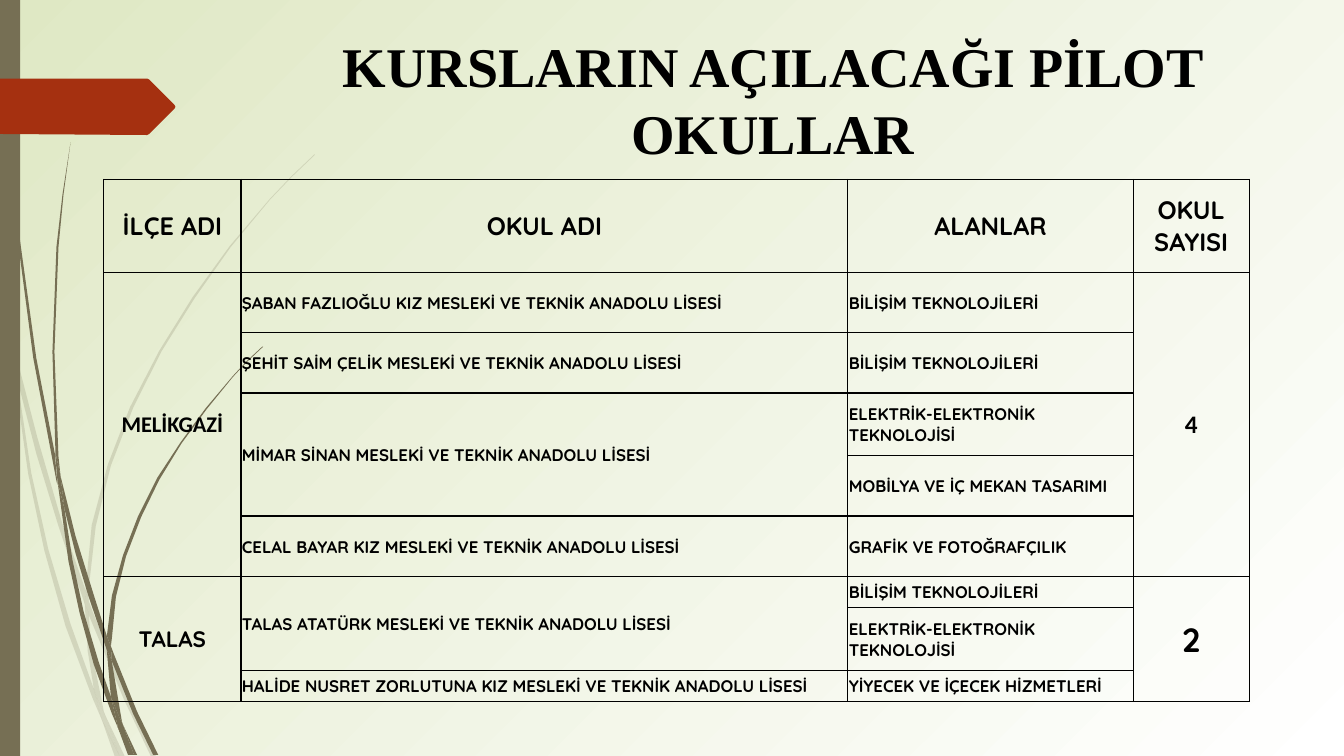
from dataclasses import dataclass
from lxml.etree import SubElement
from pptx import Presentation
from pptx.dml.color import RGBColor
from pptx.enum.shapes import MSO_SHAPE
from pptx.enum.text import MSO_ANCHOR, PP_ALIGN
from pptx.oxml.ns import qn
from pptx.util import Pt

PX = 9144  # EMU; 100 px to the inch
BLACK = RGBColor(0x00, 0x00, 0x00)
WHITE = RGBColor(0xFF, 0xFF, 0xFF)
LIME = RGBColor(0xDF, 0xE8, 0xC4)
OLIVE = RGBColor(0x76, 0x6F, 0x54)
RUST = RGBColor(0xA5, 0x30, 0x10)

Points = tuple[tuple[int, int], ...]


@dataclass
class Wisp:
    """A bunch of grass blades in one tint, each blade an outline."""
    alpha: int
    blades: tuple[Points, ...]


@dataclass
class Entry:
    row: int
    col: int
    text: str
    size: int = 12
    span: int = 1
    font: str = "Quicksand"


PALE = Wisp(20, (
    ((11, 350), (9, 322), (0, 282), (0, 299), (10, 344)),
    ((58, 522), (84, 599), (85, 586), (62, 520), (37, 434), (14, 345), (17, 376), (36, 450)),
    ((92, 607), (88, 596), (88, 610), (123, 694), (150, 751), (155, 751), (127, 692)),
    ((119, 751), (124, 751), (105, 711)),
    ((93, 683), (70, 619), (48, 545), (31, 469), (17, 376), (11, 350), (28, 470),
     (44, 546), (65, 621), (92, 693), (101, 714), (99, 707)),
    ((84, 599), (87, 646), (93, 683), (96, 692), (105, 711), (103, 706), (91, 646),
     (88, 610), (88, 608)),
    ((88, 584), (95, 522), (110, 462), (132, 405), (160, 349), (193, 296), (229, 245),
     (268, 198), (290, 175), (312, 154), (312, 153), (289, 175), (268, 197), (228, 244),
     (191, 295), (158, 348), (129, 404), (107, 461), (91, 521), (85, 584), (85, 586),
     (88, 596)),
    ((101, 714), (114, 751), (119, 751)),
    ((88, 608), (88, 610), (88, 596), (85, 586), (84, 599)),
    ((96, 692), (93, 683), (99, 707), (101, 714), (119, 751), (105, 711)),
))
DARK = Wisp(100, (
    ((7, 110), (17, 233), (33, 355), (56, 477), (57, 481), (55, 457), (55, 453),
     (36, 355), (19, 232), (8, 109), (5, 48), (4, 0), (3, 0), (4, 48)),
    ((88, 592), (106, 645), (106, 633), (106, 631), (93, 590), (75, 532), (60, 472),
     (64, 505), (75, 549)),
    ((113, 649), (110, 641), (111, 656), (132, 708), (152, 749), (157, 749), (136, 706)),
    ((110, 691), (98, 657), (83, 607), (72, 556), (64, 505), (57, 477), (68, 557),
     (79, 608), (93, 659), (111, 708), (117, 722), (116, 717)),
    ((60, 472), (58, 453), (54, 349), (58, 245), (63, 193), (70, 141), (62, 193),
     (56, 245), (52, 349), (55, 449)),
    ((133, 749), (136, 749), (122, 719)),
    ((57, 477), (64, 505), (60, 472), (55, 449), (55, 453)),
    ((111, 633), (115, 592), (125, 552), (140, 513), (158, 476), (180, 440), (205, 406),
     (231, 374), (245, 359), (261, 344), (260, 344), (245, 358), (231, 373), (204, 405),
     (179, 439), (156, 474), (137, 512), (122, 551), (111, 591), (106, 631), (110, 641)),
    ((117, 722), (127, 749), (131, 749)),
    ((106, 645), (110, 691), (116, 706), (122, 719), (121, 716), (111, 656), (109, 651)),
    ((106, 645), (109, 651), (111, 656), (110, 641), (106, 631), (106, 633)),
    ((116, 706), (110, 691), (116, 717), (117, 722), (130, 749), (133, 749), (122, 719)),
))
ARROW = ((0, 78), (146, 78), (148, 79), (173, 104), (174, 106), (173, 108),
         (148, 133), (146, 134), (0, 133))

COLS = (136, 602, 283, 115)
ROWS = (92, 60, 60, 62, 60, 60, 31, 62, 31)
ENTRIES = (
    *(Entry(0, col, name, 18)
      for col, name in enumerate(("İLÇE ADI", "OKUL ADI", "ALANLAR", "OKUL SAYISI"))),
    Entry(1, 0, "MELİKGAZİ", 16, 5, "Calibri"),
    Entry(6, 0, "TALAS", 16, 3),
    Entry(1, 1, "ŞABAN FAZLIOĞLU KIZ MESLEKİ VE TEKNİK ANADOLU LİSESİ"),
    Entry(2, 1, "ŞEHİT SAİM ÇELİK MESLEKİ VE TEKNİK ANADOLU LİSESİ"),
    Entry(3, 1, "MİMAR SİNAN MESLEKİ VE TEKNİK ANADOLU LİSESİ", span=2),
    Entry(5, 1, "CELAL BAYAR KIZ MESLEKİ VE TEKNİK ANADOLU LİSESİ"),
    Entry(6, 1, "TALAS ATATÜRK MESLEKİ VE TEKNİK ANADOLU LİSESİ", span=2),
    Entry(8, 1, "HALİDE NUSRET ZORLUTUNA KIZ MESLEKİ VE TEKNİK ANADOLU LİSESİ"),
    *(Entry(row, 2, field) for row, field in enumerate((
        "BİLİŞİM TEKNOLOJİLERİ", "BİLİŞİM TEKNOLOJİLERİ",
        "ELEKTRİK-ELEKTRONİK TEKNOLOJİSİ", "MOBİLYA VE İÇ MEKAN TASARIMI",
        "GRAFİK VE FOTOĞRAFÇILIK", "BİLİŞİM TEKNOLOJİLERİ",
        "ELEKTRİK-ELEKTRONİK TEKNOLOJİSİ", "YİYECEK VE İÇECEK HİZMETLERİ"), 1)),
    Entry(1, 3, "4", 18, 5, "Calibri"),
    Entry(6, 3, "2", 24, 3),
)


def paint(shape, color: RGBColor, alpha: int = 100) -> None:
    shape.shadow.inherit = False
    shape.line.fill.background()
    shape.fill.solid()
    shape.fill.fore_color.rgb = color
    if alpha < 100:
        tint = shape.element.spPr.find(".//" + qn("a:srgbClr"))
        SubElement(tint, qn("a:alpha"), val=str(alpha * 1000))


def outline(shapes, points: Points, color: RGBColor, alpha: int = 100) -> None:
    pen = shapes.build_freeform(*points[0], scale=PX)
    pen.add_line_segments(points[1:], close=True)
    paint(pen.convert_to_shape(), color, alpha)


def shade(slide) -> None:
    """Glow from white at the bottom right to lime at the top left."""
    fill = slide.background.fill
    fill.gradient()
    for stop, color in zip(fill.gradient_stops, (WHITE, LIME)):
        stop.color.rgb = color
    grad = slide.element.find(".//" + qn("a:gradFill"))
    grad.remove(grad.find(qn("a:lin")))
    glow = SubElement(grad, qn("a:path"), path="circle")
    SubElement(glow, qn("a:fillToRect"), l="100000", t="100000")


def style(para, size: int, name: str) -> None:
    font = para.font
    font.size, font.name, font.bold = Pt(size), name, True
    font.color.rgb = BLACK


def add_title(slide) -> None:
    frame = slide.shapes.add_textbox(279 * PX, 28 * PX, 975 * PX, 140 * PX).text_frame
    frame.word_wrap = True
    frame.vertical_anchor = MSO_ANCHOR.MIDDLE
    para = frame.paragraphs[0]
    para.text = "KURSLARIN AÇILACAĞI PİLOT OKULLAR"
    para.alignment = PP_ALIGN.CENTER
    style(para, 40, "Times New Roman")


def border(cell) -> None:
    """Clear the cell's fill and rule its four sides."""
    props = cell._tc.get_or_add_tcPr()
    for side in ("lnL", "lnR", "lnT", "lnB"):
        line = SubElement(props, qn("a:" + side), w=str(Pt(1)))
        SubElement(SubElement(line, qn("a:solidFill")), qn("a:srgbClr"), val=str(BLACK))
    cell.fill.background()


def add_schools(slide) -> None:
    table = slide.shapes.add_table(len(ROWS), len(COLS), 103 * PX, 178 * PX,
                                   sum(COLS) * PX, sum(ROWS) * PX).table
    table.first_row = table.horz_banding = False
    for col, width in zip(table.columns, COLS):
        col.width = width * PX
    for row, height in zip(table.rows, ROWS):
        row.height = height * PX
    for cell in table.iter_cells():
        border(cell)
        cell.margin_left = cell.margin_right = cell.margin_top = PX
        cell.margin_bottom = 0
        cell.vertical_anchor = MSO_ANCHOR.MIDDLE
        style(cell.text_frame.paragraphs[0], 12, "Quicksand")
    for item in ENTRIES:
        cell = table.cell(item.row, item.col)
        if item.span > 1:
            cell.merge(table.cell(item.row + item.span - 1, item.col))
        para = cell.text_frame.paragraphs[0]
        para.text = item.text
        para.alignment = PP_ALIGN.LEFT if item.size == 12 else PP_ALIGN.CENTER
        style(para, item.size, item.font)


def main() -> None:
    deck = Presentation()
    deck.slide_width, deck.slide_height = 1333 * PX, 750 * PX
    slide = deck.slides.add_slide(deck.slide_layouts[6])
    shade(slide)
    for wisp in (PALE, DARK):
        group = slide.shapes.add_group_shape()
        for blade in wisp.blades:
            outline(group.shapes, blade, OLIVE, wisp.alpha)
    paint(slide.shapes.add_shape(MSO_SHAPE.RECTANGLE, 0, 0, 20 * PX, 750 * PX), OLIVE)
    outline(slide.shapes, ARROW, RUST)
    add_title(slide)
    add_schools(slide)
    deck.save("out.pptx")


if __name__ == "__main__":
    main()
